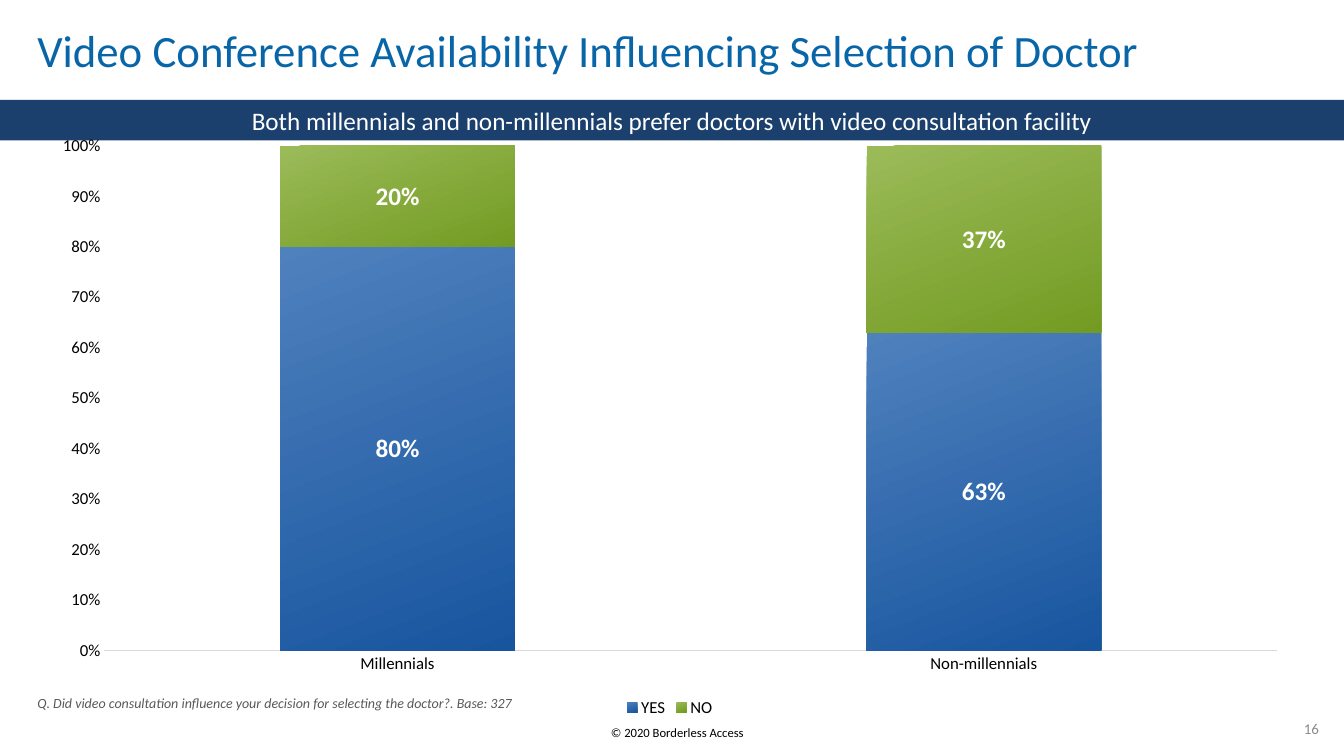
from dataclasses import dataclass

from lxml.etree import SubElement
from pptx import Presentation
from pptx.chart.data import CategoryChartData
from pptx.chart.chart import Chart
from pptx.dml.color import RGBColor
from pptx.enum.chart import XL_CHART_TYPE, XL_LABEL_POSITION, XL_LEGEND_POSITION, XL_TICK_MARK
from pptx.enum.shapes import MSO_SHAPE
from pptx.enum.text import MSO_ANCHOR, MSO_AUTO_SIZE, PP_ALIGN
from pptx.oxml import parse_xml
from pptx.oxml.ns import nsdecls, qn
from pptx.util import Cm, Pt

FONT = "Calibri"
PERCENT = "###0%"
BLACK = RGBColor(0x00, 0x00, 0x00)
WHITE = RGBColor(0xFF, 0xFF, 0xFF)
TITLE_BLUE = RGBColor(0x08, 0x66, 0xA8)
BAND_BLUE = RGBColor(0x1B, 0x40, 0x6D)
NOTE_GRAY = RGBColor(0x59, 0x59, 0x59)
NUMBER_GRAY = RGBColor(0x8C, 0x8C, 0x8C)
AXIS_GRAY = RGBColor(0xD9, 0xD9, 0xD9)


@dataclass(frozen=True)
class Box:
    left: float
    top: float
    width: float
    height: float

    def lengths(self) -> tuple[Cm, Cm, Cm, Cm]:
        return Cm(self.left), Cm(self.top), Cm(self.width), Cm(self.height)


@dataclass(frozen=True)
class Label:
    text: str
    box: Box
    size: float
    color: RGBColor
    align: PP_ALIGN = PP_ALIGN.CENTER
    anchor: MSO_ANCHOR = MSO_ANCHOR.MIDDLE
    italic: bool = False
    line_spacing: float = 1.0


@dataclass(frozen=True)
class Answer:
    name: str
    values: tuple[float, ...]
    light: RGBColor
    dark: RGBColor


TITLE = Label("Video Conference Availability Influencing Selection of Doctor",
              Box(0.94, 0.76, 28.65, 1.17), 32, TITLE_BLUE, PP_ALIGN.LEFT, line_spacing=0.85)
BAND = Label("Both millennials and non-millennials prefer doctors with video consultation facility",
             Box(0, 2.52, 33.87, 1.02), 18, WHITE)
QUESTION = Label("Q. Did video consultation influence your decision for selecting the doctor?. Base: 327",
                 Box(0.94, 17.5, 32.28, 0.43), 10, NOTE_GRAY, PP_ALIGN.LEFT, MSO_ANCHOR.BOTTOM, True)
SMALL_PRINT = (
    Label("© 2020 Borderless Access", Box(12.32, 18.26, 9.5, 0.4), 9, BLACK),
    Label("16", Box(32.72, 18.14, 0.66, 0.46), 10.7, NUMBER_GRAY),
)
CHART_BOX = Box(0.94, 3.12, 31.88, 15.06)
PLOT_FRACTIONS = {"x": 0.053, "y": 0.037, "w": 0.927, "h": 0.844}
GROUPS = ("Millennials", "Non-millennials")
ANSWERS = (
    Answer("YES", (0.8, 0.63), RGBColor(0x4F, 0x81, 0xBD), RGBColor(0x18, 0x55, 0x9F)),
    Answer("NO", (0.2, 0.37), RGBColor(0x9B, 0xBB, 0x59), RGBColor(0x73, 0x9B, 0x22)),
)


def style_font(font, size: float, color: RGBColor) -> None:
    font.name = FONT
    font.size = Pt(size)
    font.color.rgb = color


def write_label(shape, label: Label) -> None:
    shape.left, shape.top, shape.width, shape.height = label.box.lengths()
    frame = shape.text_frame
    frame.margin_left = frame.margin_right = frame.margin_top = frame.margin_bottom = 0
    frame.word_wrap = True
    frame.auto_size = MSO_AUTO_SIZE.NONE
    frame.vertical_anchor = label.anchor
    paragraph = frame.paragraphs[0]
    paragraph.alignment = label.align
    paragraph.line_spacing = label.line_spacing
    paragraph.space_before = Pt(0)
    run = paragraph.add_run()
    run.text = label.text
    style_font(run.font, label.size, label.color)
    run.font.italic = label.italic


def remove_bullet(paragraph) -> None:
    properties = paragraph._p.get_or_add_pPr()
    properties.set("marL", "0")
    properties.set("indent", "0")
    SubElement(properties, qn("a:buNone"))


def place_plot(chart: Chart) -> None:
    plot_area = chart._chartSpace.chart.plotArea
    for layout in plot_area.findall(qn("c:layout")):
        plot_area.remove(layout)
    modes = "".join(f'<c:{key}Mode val="edge"/>' for key in ("x", "y"))
    sizes = "".join(f'<c:{key} val="{value}"/>' for key, value in PLOT_FRACTIONS.items())
    plot_area.insert(0, parse_xml(
        f'<c:layout {nsdecls("c")}><c:manualLayout><c:layoutTarget val="inner"/>'
        f"{modes}{sizes}</c:manualLayout></c:layout>"))


def format_series(series, answer: Answer) -> None:
    fill = series.format.fill
    fill.gradient()
    fill.gradient_angle = 291
    for stop, color, position in zip(fill.gradient_stops, (answer.light, answer.dark), (0, 1)):
        stop.color.rgb = color
        stop.position = position
    labels = series.data_labels
    labels.show_value = True
    labels.number_format = PERCENT
    labels.number_format_is_linked = False
    labels.position = XL_LABEL_POSITION.CENTER
    style_font(labels.font, 18, WHITE)
    labels.font.bold = True


def add_answer_chart(slide) -> None:
    data = CategoryChartData(number_format=PERCENT)
    data.categories = GROUPS
    for answer in ANSWERS:
        data.add_series(answer.name, answer.values)
    chart = slide.shapes.add_chart(
        XL_CHART_TYPE.COLUMN_STACKED_100, *CHART_BOX.lengths(), data).chart
    style_font(chart.font, 10, BLACK)
    chart.has_title = False
    chart.has_legend = True
    chart.legend.position = XL_LEGEND_POSITION.BOTTOM
    chart.legend.include_in_layout = False
    style_font(chart.legend.font, 12, BLACK)
    for axis in (chart.category_axis, chart.value_axis):
        axis.major_tick_mark = axis.minor_tick_mark = XL_TICK_MARK.NONE
        axis.has_major_gridlines = False
        style_font(axis.tick_labels.font, 12, BLACK)
    chart.category_axis.format.line.color.rgb = AXIS_GRAY
    chart.category_axis.format.line.width = Pt(1)
    value_axis = chart.value_axis
    value_axis.format.line.fill.background()
    value_axis.minimum_scale, value_axis.maximum_scale, value_axis.major_unit = 0, 1, 0.1
    value_axis.tick_labels.number_format = PERCENT
    value_axis.tick_labels.number_format_is_linked = False
    plot = chart.plots[0]
    plot.gap_width, plot.overlap, plot.vary_by_categories = 150, 100, False
    for series, answer in zip(plot.series, ANSWERS):
        format_series(series, answer)
    place_plot(chart)


def main() -> None:
    presentation = Presentation()
    presentation.slide_width, presentation.slide_height = Cm(33.87), Cm(19.05)
    slide = presentation.slides.add_slide(presentation.slide_layouts[1])
    write_label(slide.shapes.title, TITLE)
    question = slide.placeholders[1]
    write_label(question, QUESTION)
    remove_bullet(question.text_frame.paragraphs[0])
    for label in SMALL_PRINT:
        write_label(slide.shapes.add_textbox(*label.box.lengths()), label)
    band = slide.shapes.add_shape(MSO_SHAPE.RECTANGLE, *BAND.box.lengths())
    band.shadow.inherit = False
    band.fill.solid()
    band.fill.fore_color.rgb = BAND_BLUE
    band.line.fill.background()
    write_label(band, BAND)
    add_answer_chart(slide)
    presentation.save("out.pptx")


if __name__ == "__main__":
    main()
